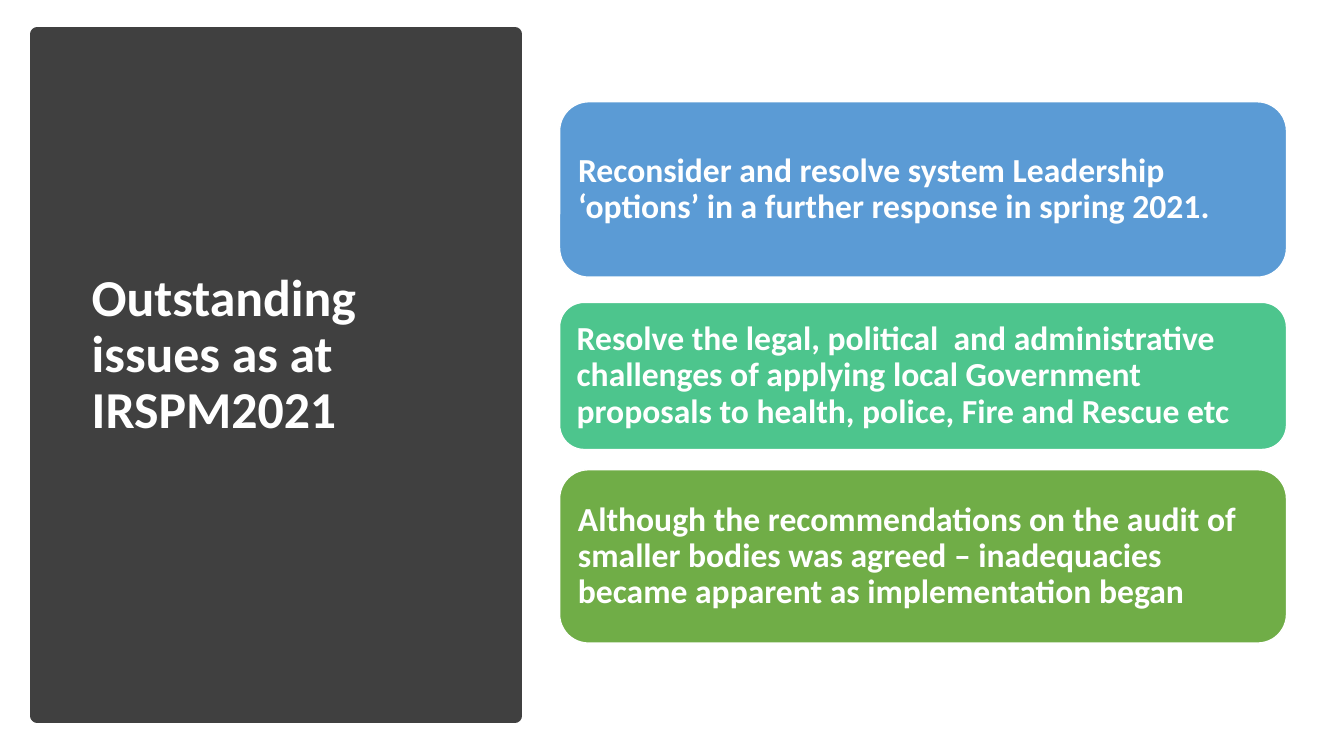
"""Build the slide of outstanding issues as at IRSPM2021."""
from pptx import Presentation
from pptx.dml.color import RGBColor
from pptx.enum.shapes import MSO_SHAPE as Shape
from pptx.enum.text import MSO_ANCHOR as Anchor, MSO_AUTO_SIZE as AutoSize, PP_ALIGN as Align
from pptx.util import Inches, Pt

WHITE = RGBColor(0xFF, 0xFF, 0xFF)
CHARCOAL = RGBColor(0x40, 0x40, 0x40)
BLUE = RGBColor(0x5B, 0x9B, 0xD5)
TEAL = RGBColor(0x4D, 0xC5, 0x8D)
GREEN = RGBColor(0x70, 0xAD, 0x47)

ISSUES = [
    (1.01, 1.74, BLUE, "Reconsider and resolve system Leadership ‘options’ "
     "in a further response in spring 2021."),
    (3, 1.46, TEAL, "Resolve the legal, political  and administrative challenges of applying "
     "local Government proposals to health, police, Fire and Rescue etc"),
    (4.66, 1.72, GREEN, "Although the recommendations on the audit of smaller bodies was agreed "
     "– inadequacies became apparent as implementation began"),
]


def add_box(slide, kind, left, top, width, height, fill, line, line_width):
    shape = slide.shapes.add_shape(
        kind, Inches(left), Inches(top), Inches(width), Inches(height))
    shape.shadow.inherit = False
    shape.fill.solid()
    shape.fill.fore_color.rgb = fill
    shape.line.color.rgb = line
    shape.line.width = Pt(line_width)
    return shape


def write_text(shape, text, size):
    frame = shape.text_frame
    frame.text = text
    frame_format = {"word_wrap": True, "auto_size": AutoSize.NONE,
                    "vertical_anchor": Anchor.MIDDLE,
                    "margin_left": Inches(0.1), "margin_right": Inches(0.1),
                    "margin_top": Inches(0.1), "margin_bottom": Inches(0.1)}
    for name, value in frame_format.items():
        setattr(frame, name, value)
    paragraph = frame.paragraphs[0]
    paragraph.alignment = Align.LEFT
    paragraph.line_spacing = 0.9
    font = paragraph.runs[0].font
    for name, value in {"name": "Calibri", "size": Pt(size), "bold": True}.items():
        setattr(font, name, value)
    font.color.rgb = WHITE


presentation = Presentation()
presentation.slide_width = Inches(13.33)
presentation.slide_height = Inches(7.5)
slide = presentation.slides.add_slide(presentation.slide_layouts[5])

title = slide.shapes.title
title_place = {"left": 0.81, "top": 0.81, "width": 3.8, "height": 5.43}
for name, value in title_place.items():
    setattr(title, name, Inches(value))
write_text(title, "Outstanding issues as at IRSPM2021", 37)

panel = add_box(slide, Shape.RECTANGLE, 0.37, 0.34, 4.74, 6.76, CHARCOAL, CHARCOAL, 10)
title.element.addprevious(panel.element)

for top, height, color, text in ISSUES:
    card = add_box(slide, Shape.ROUNDED_RECTANGLE, 5.55, top, 7.21, height, color, WHITE, 1)
    write_text(card, text, 24)

presentation.save("out.pptx")
